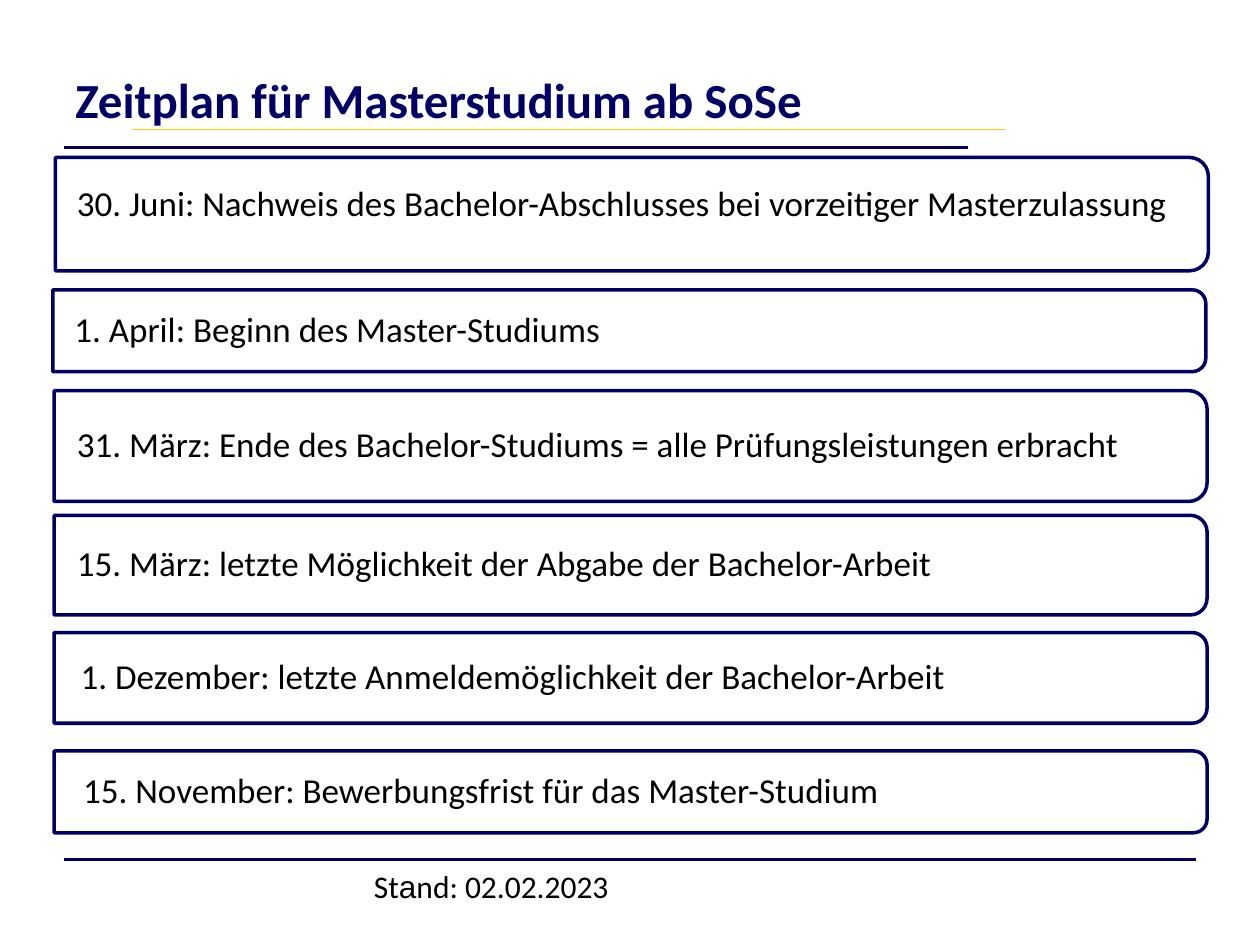
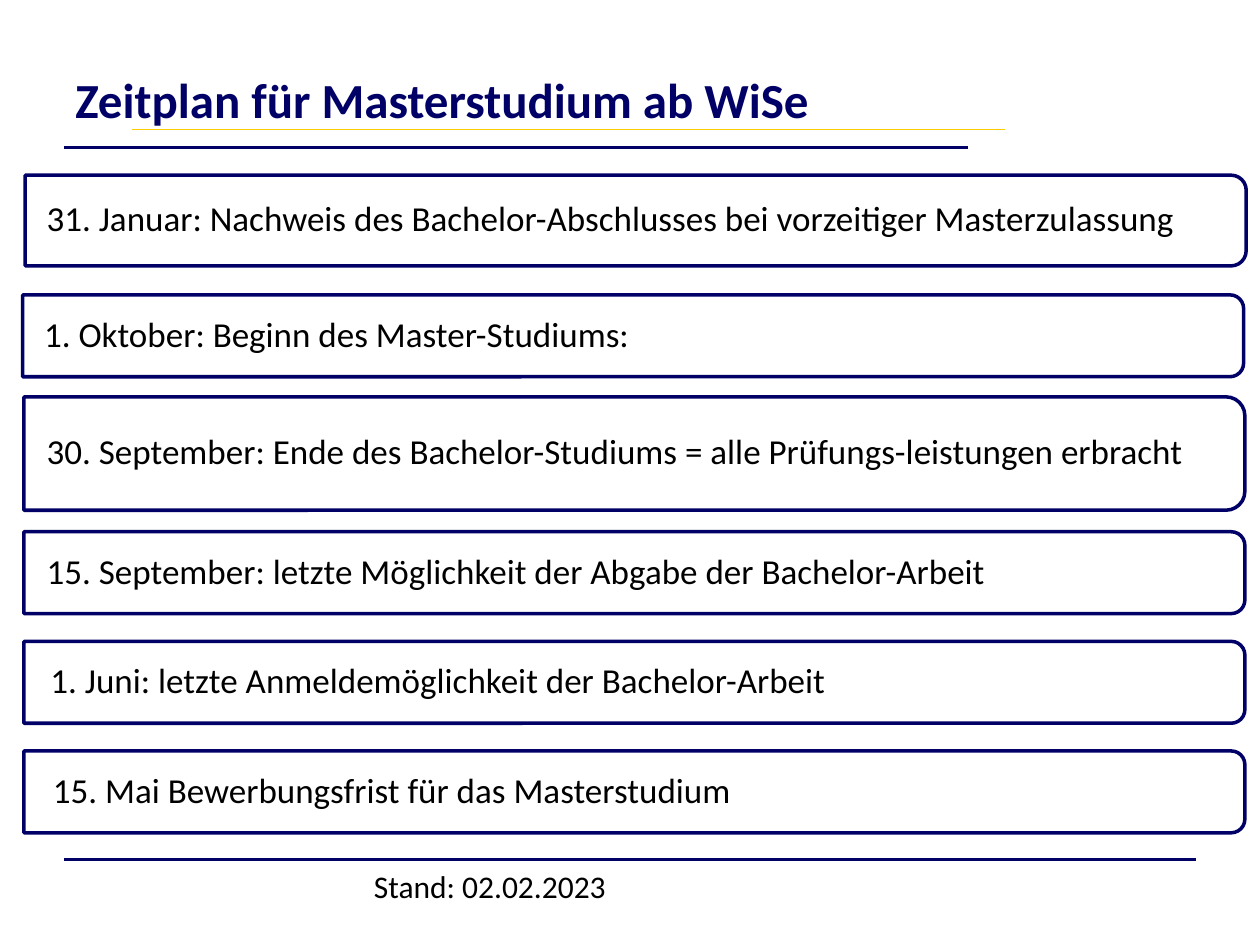
from lxml import etree
from pptx import Presentation
from pptx.dml.color import RGBColor
from pptx.enum.shapes import MSO_CONNECTOR as Link, MSO_SHAPE as Shape
from pptx.enum.text import MSO_ANCHOR as Anchor
from pptx.oxml.ns import qn
from pptx.util import Inches, Pt

# Shared look
NAVY, GOLD, BLACK, WHITE = "000066", "FFCC00", "000000", "FFFFFF"
FONT = "Calibri"
RULES = [  # left, right, y, colour, points
    (0.51, 9.49, 6.82, NAVY, 2),
    (0.51, 7.68, 1.17, NAVY, 2),
    (1.05, 7.98, 1.03, GOLD, 0.5),
]
INDENTS = [0.17, 0.17, 0.18, 0.18, 0.21, 0.23]

# Per slide: title, bar width, bars (left, top, height, text), lift of first text
SUMMER = ("Zeitplan für Masterstudium ab SoSe", 9.15, [
    (0.44, 1.25, 0.9, "30. Juni: Nachweis des Bachelor-Abschlusses bei vorzeitiger Masterzulassung"),
    (0.42, 2.3, 0.65, "1. April: Beginn des Master-Studiums"),
    (0.43, 3.1, 0.88, "31. März: Ende des Bachelor-Studiums = alle Prüfungsleistungen erbracht"),
    (0.43, 4.09, 0.79, "15. März: letzte Möglichkeit der Abgabe der Bachelor-Arbeit"),
    (0.43, 5.02, 0.72, "1. Dezember: letzte Anmeldemöglichkeit der Bachelor-Arbeit"),
    (0.43, 5.96, 0.65, "15. November: Bewerbungsfrist für das Master-Studium"),
], 0.07, [("St", FONT), ("a", "Arial"), ("nd: 02.02.2023", FONT)])
WINTER = ("Zeitplan für Masterstudium ab WiSe", 9.69, [
    (0.2, 1.39, 0.72, "31. Januar: Nachweis des Bachelor-Abschlusses bei vorzeitiger Masterzulassung"),
    (0.18, 2.34, 0.65, "1. Oktober: Beginn des Master-Studiums:"),
    (0.19, 3.15, 0.9, "30. September: Ende des Bachelor-Studiums = alle Prüfungs-leistungen erbracht"),
    (0.19, 4.22, 0.65, "15. September: letzte Möglichkeit der Abgabe der Bachelor-Arbeit"),
    (0.19, 5.09, 0.65, "1. Juni: letzte Anmeldemöglichkeit der Bachelor-Arbeit"),
    (0.19, 5.96, 0.65, "15. Mai Bewerbungsfrist für das Masterstudium"),
], 0, [("Stand: 02.02.2023", FONT)])


def paint(target, color):
    """Set the colour of a font or a line, or a solid fill."""
    if hasattr(target, "solid"):
        target.solid()
        target = target.fore_color
    else:
        target = target.color
    target.rgb = RGBColor.from_string(color)


def add_rule(slide, left, right, y, color, width):
    rule = slide.shapes.add_connector(
        Link.STRAIGHT, Inches(left), Inches(y), Inches(right), Inches(y))
    paint(rule.line, color)
    rule.line.width = Pt(width)
    etree.SubElement(rule.line._get_or_add_ln().getparent(), qn("a:effectLst"))


def add_text(shapes, left, top, width, height, runs, size, color, bold=False):
    box = shapes.add_textbox(*map(Inches, (left, top, width, height)))
    frame = box.text_frame
    frame.word_wrap = True
    para = frame.paragraphs[0]
    for text, font in runs:
        run = para.add_run()
        run.text = text
        run.font.name = font
        run.font.size = Pt(size)
        run.font.bold = bold
        paint(run.font, color)
    return frame


def add_bar(slide, left, top, width, height, text, indent, lift):
    group = slide.shapes.add_group_shape()
    # The upright shape is turned so that its round corners face right
    x = left + (width - height) / 2
    y = top + (height - width) / 2
    bar = group.shapes.add_shape(
        Shape.ROUND_2_SAME_RECTANGLE, *map(Inches, (x, y, height, width)))
    bar.rotation = 90
    bar.shadow.inherit = False
    paint(bar.fill, WHITE)
    tint = bar.fill._xPr.find(".//" + qn("a:srgbClr"))
    etree.SubElement(tint, qn("a:alpha"), val="90000")
    paint(bar.line, NAVY)
    bar.line.width = Pt(2)

    frame = add_text(group.shapes, left, top - lift, width, height,
                     [(text, FONT)], 20, BLACK)
    frame.vertical_anchor = Anchor.MIDDLE
    frame.margin_left = Inches(indent)
    frame.margin_right = frame.margin_top = frame.margin_bottom = Inches(0.02)
    para = frame.paragraphs[0]
    para.line_spacing = 0.9
    para.space_after = Pt(3)


def add_plan(deck, title, width, bars, lift, stamp):
    slide = deck.slides.add_slide(deck.slide_layouts[6])
    for rule in RULES:
        add_rule(slide, *rule)
    head = add_text(slide.shapes, 0.5, 0.16, 6.86, 1.25,
                    [(title, FONT)], 28, NAVY, True)
    head.vertical_anchor = Anchor.MIDDLE
    for i, (left, top, height, text) in enumerate(bars):
        add_bar(slide, left, top, width, height, text, INDENTS[i],
                lift if i == 0 else 0)
    add_text(slide.shapes, 2.87, 6.83, 6.06, 0.52, stamp, 18, BLACK)


def main():
    deck = Presentation()
    deck.slide_width, deck.slide_height = Inches(10), Inches(7.5)
    for plan in (SUMMER, WINTER):
        add_plan(deck, *plan)
    deck.save("out.pptx")


if __name__ == "__main__":
    main()
